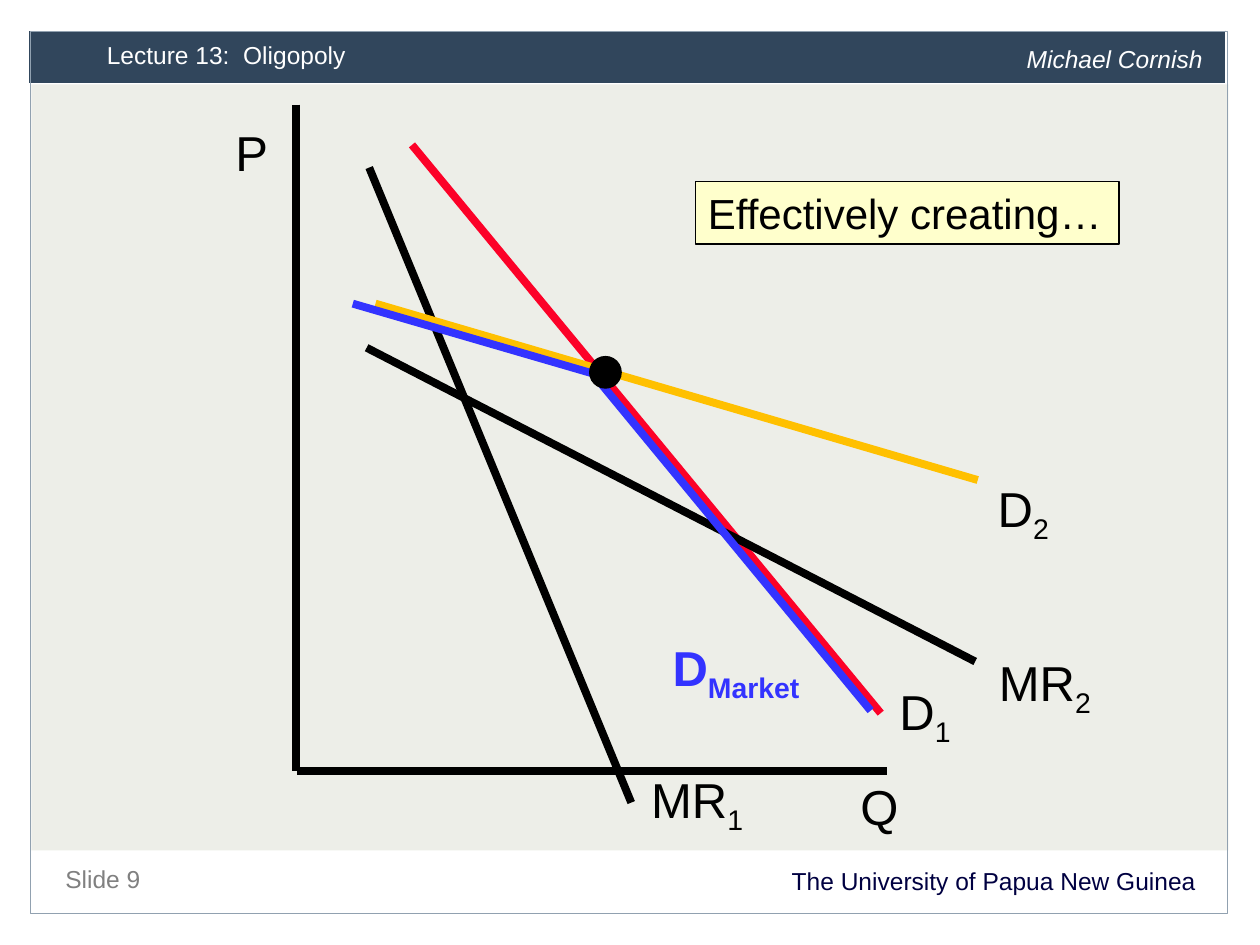
from pptx import Presentation
from pptx.dml.color import RGBColor
from pptx.enum.shapes import MSO_CONNECTOR, MSO_SHAPE
from pptx.enum.text import MSO_ANCHOR, PP_ALIGN
from pptx.oxml.ns import qn
from pptx.util import Pt
from lxml.etree import SubElement

PX = 9144
SLIDE_SIZE = (1000, 750)
BLACK, BLUE, WHITE = "000000", "3333FF", "FFFFFF"

PANELS = [
    ((25, 67, 950, 608), "EDEEE8", None, 0),
    ((23, 24, 950, 42), "31465C", WHITE, 0.5),
    ((24, 25, 950, 700), None, "91A1B0", 0.75),
]
BANNERS = [
    ((42, 683, 917, 32), "The University of Papua New Guinea", "000041", PP_ALIGN.RIGHT, False),
    ((42, 680, 433, 34), "Slide 9", "808080", PP_ALIGN.LEFT, False),
    ((75, 25, 613, 37), "Lecture 13:  Oligopoly", WHITE, PP_ALIGN.LEFT, False),
    ((805, 28, 164, 37), "Michael Cornish", WHITE, PP_ALIGN.LEFT, True),
]
LINES = [
    ((235, 83), (235, 612), BLACK),
    ((236, 612), (704, 612), BLACK),
    ((327, 115), (699, 566), "FC0128"),
    ((293, 133), (501, 637), BLACK),
    ((298, 241), (776, 381), "FFC000"),
    ((291, 276), (774, 525), BLACK),
    ((280, 241), (469, 296), BLUE),
    ((470, 296), (691, 564), BLUE),
]
CALLOUT = ((552, 144, 336, 50), "Effectively creating…")
KINK = (468, 283, 25, 25)
LABELS = [
    ((704, 536, 89, 56), "D", "1", BLACK, False),
    ((507, 606, 98, 56), "MR", "1", BLACK, False),
    ((783, 513, 98, 56), "MR", "2", BLACK, False),
    ((782, 375, 89, 56), "D", "2", BLACK, False),
    ((177, 92, 47, 56), "P", "", BLACK, False),
    ((673, 611, 50, 57), "Q", "", BLACK, False),
    ((524, 501, 145, 57), "D", "Market", BLUE, True),
]


def emu(values):
    return [value * PX for value in values]


def color(value):
    return RGBColor.from_string(value)


def add_panel(page, kind, place, fill, line, width):
    shape = page.shapes.add_shape(kind, *emu(place))
    shape.shadow.inherit = False
    if fill:
        shape.fill.solid()
        shape.fill.fore_color.rgb = color(fill)
    else:
        shape.fill.background()
    if line:
        shape.line.color.rgb = color(line)
        shape.line.width = Pt(width)
    else:
        shape.line.fill.background()
    return shape


def add_line(page, start, end, tint):
    line = page.shapes.add_connector(MSO_CONNECTOR.STRAIGHT, *emu(start + end))
    line.line.color.rgb = color(tint)
    line.line.width = Pt(4.5)
    SubElement(line._element.spPr, qn("a:effectLst"))


def write(box, parts, tint, size, wrap=True, anchor=MSO_ANCHOR.TOP,
          align=PP_ALIGN.LEFT, **style):
    frame = box.text_frame
    frame.word_wrap = wrap
    frame.vertical_anchor = anchor
    para = frame.paragraphs[0]
    para.alignment = align
    formats = {"name": "Arial", "size": Pt(size), **style}
    for index, text in enumerate(filter(None, parts)):
        span = para.add_run()
        span.text = text
        for name, value in formats.items():
            setattr(span.font, name, value)
        span.font.color.rgb = color(tint)
        if index:
            span._r.get_or_add_rPr().set("baseline", "-25000")


def main():
    deck = Presentation()
    deck.slide_width, deck.slide_height = emu(SLIDE_SIZE)
    page = deck.slides.add_slide(deck.slide_layouts[6])

    for panel in PANELS:
        add_panel(page, MSO_SHAPE.RECTANGLE, *panel)
    for place, text, tint, align, italic in BANNERS:
        box = page.shapes.add_textbox(*emu(place))
        write(box, [text], tint, 14, anchor=MSO_ANCHOR.MIDDLE, align=align, italic=italic)
    for line in LINES:
        add_line(page, *line)

    place, text = CALLOUT
    callout = add_panel(page, MSO_SHAPE.RECTANGLE, place, "FFFFCC", BLACK, 1)
    write(callout, [text], BLACK, 24, wrap=False)
    add_panel(page, MSO_SHAPE.FLOWCHART_CONNECTOR, KINK, BLACK, BLACK, 0.75)

    for place, base, subscript, tint, bold in LABELS:
        box = page.shapes.add_textbox(*emu(place))
        write(box, [base, subscript], tint, 28, bold=bold)

    deck.save("out.pptx")


if __name__ == "__main__":
    main()
